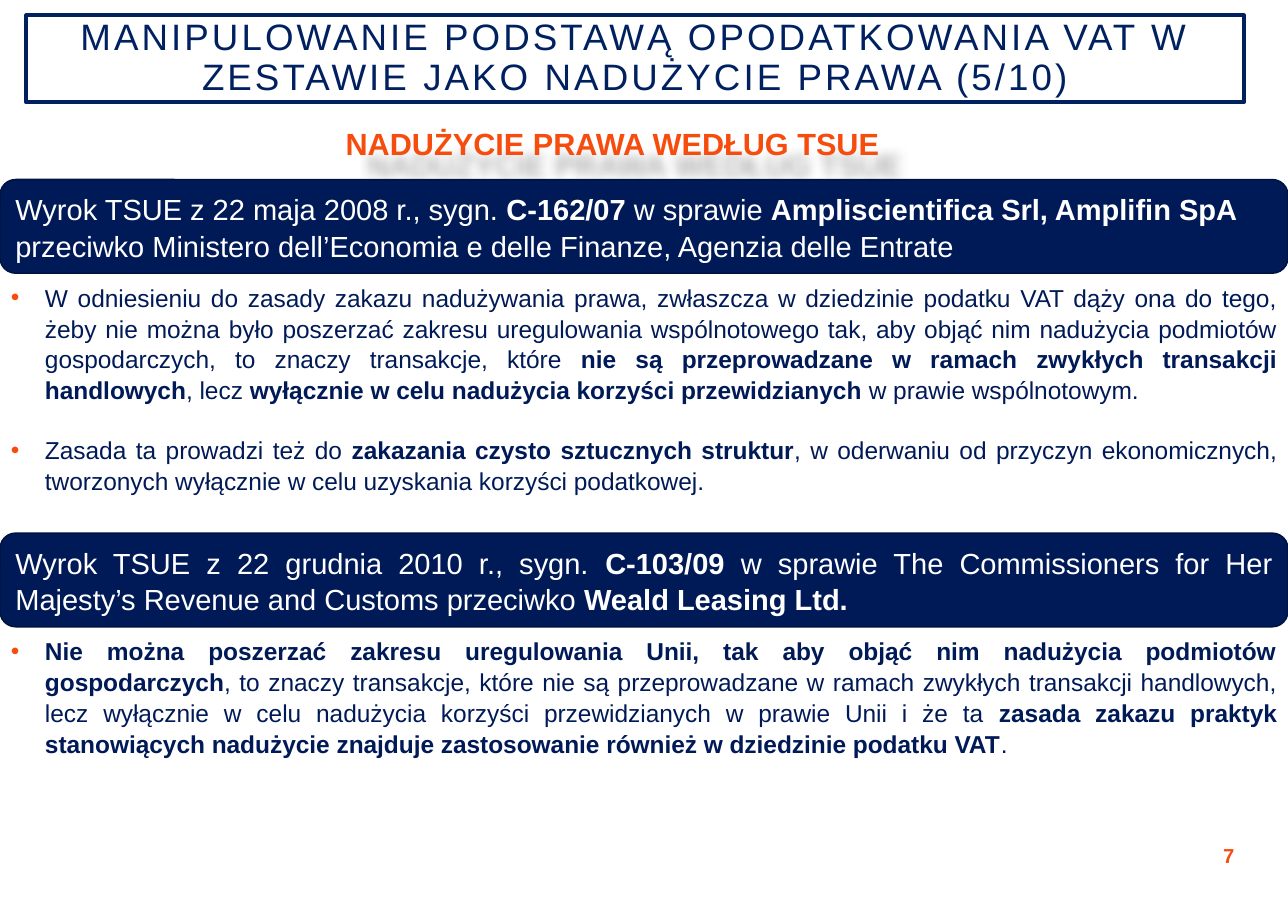
"""Build the slide on abuse of law in VAT according to CJEU rulings."""
from lxml import etree
from pptx import Presentation, util as u
from pptx.dml.color import RGBColor
from pptx.enum import shapes, text
from pptx.oxml import ns

THEME = {
    "font": "Arial", "title": "002060", "navy": "001A57", "edge": "001340",
    "accent": "F64C0E", "white": "FFFFFF",
    "title_size": 24, "subtitle_size": 20, "ruling_size": 19,
    "body_size": 16, "number_size": 13.2,
}
ALIGN = text.PP_ALIGN

deck = Presentation()
deck.slide_width, deck.slide_height = u.Inches(11.69), u.Inches(8.27)
slide = deck.slides.add_slide(deck.slide_layouts[6])


def place(left, top, width, height, preset=None, fill=None, line=None, weight=1):
    """Add a shape or a text box, measured in hundredths of the slide."""
    column, row = deck.slide_width / 100, deck.slide_height / 100
    area = [int(left * column), int(top * row), int(width * column), int(height * row)]
    if preset is None:
        part = slide.shapes.add_textbox(*area)
    else:
        part = slide.shapes.add_shape(preset, *area)
        part.shadow.inherit = False
        part.fill.solid()
        part.fill.fore_color.rgb = RGBColor.from_string(THEME[fill])
        part.line.color.rgb = RGBColor.from_string(THEME[line])
        part.line.width = u.Pt(weight)
    part.text_frame.word_wrap = True
    part.text_frame.vertical_anchor = text.MSO_ANCHOR.MIDDLE
    return part


def write(part, paragraphs, size, color, align, bold=False, spacing=None, gap=0, bullet=False):
    """Fill a part with paragraphs; asterisks switch bold on and off."""
    frame = part.text_frame
    for index, words in enumerate(paragraphs):
        paragraph = frame.add_paragraph() if index else frame.paragraphs[0]
        if bullet:
            props = paragraph._p.get_or_add_pPr()
            props.set("marL", str(u.Inches(0.31)))
            props.set("indent", str(u.Inches(-0.31)))
            tint = etree.SubElement(props, ns.qn("a:buClr"))
            etree.SubElement(tint, ns.qn("a:srgbClr"), val=THEME["accent"])
            etree.SubElement(props, ns.qn("a:buFont"), typeface=THEME["font"])
            etree.SubElement(props, ns.qn("a:buChar"), char="•")
        paragraph.alignment = align
        if spacing:
            paragraph.line_spacing = spacing
        if index and gap:
            paragraph.space_before = u.Pt(gap)
        for turn, piece in enumerate(words.split("*")):
            if piece:
                run = paragraph.add_run()
                run.text = piece
                run.font.name = THEME["font"]
                run.font.size = u.Pt(THEME[size])
                run.font.bold = bold or turn % 2 == 1
                run.font.color.rgb = RGBColor.from_string(THEME[color])


page_number = place(91.45, 91.29, 5.22, 5.32)
write(page_number, ["7"], "number_size", "accent", ALIGN.RIGHT, bold=True)

title = place(2.05, 1.69, 94.53, 9.55, shapes.MSO_SHAPE.RECTANGLE, "white", "title", 2.5)
frame = title.text_frame
frame.margin_left = frame.margin_right = frame.margin_top = frame.margin_bottom = u.Inches(0.2)
write(title, ["MANIPULOWANIE PODSTAWĄ OPODATKOWANIA VAT W ZESTAWIE JAKO NADUŻYCIE PRAWA (5/10)"],
      "title_size", "title", ALIGN.CENTER, spacing=0.9)
for run in frame.paragraphs[0].runs:
    run.font._element.set("spc", "200")

subtitle = place(23.18, 10.28, 48.76, 10.88)
write(subtitle, ["NADUŻYCIE PRAWA WEDŁUG TSUE"], "subtitle_size", "accent", ALIGN.CENTER, bold=True)
effects = etree.SubElement(subtitle._element.spPr, ns.qn("a:effectLst"))
shadow = etree.SubElement(effects, ns.qn("a:outerShdw"), blurRad=str(u.Inches(0.1)),
                          dist=str(u.Inches(0.27)), dir="2700000", algn="tl", rotWithShape="0")
shade = etree.SubElement(shadow, ns.qn("a:srgbClr"), val="000000")
etree.SubElement(shade, ns.qn("a:alpha"), val="30000")

rulings = [
    (19.71, 27.33,
     ["Wyrok TSUE z 22 maja 2008 r., sygn. *C-162/07* w sprawie *Ampliscientifica Srl, Amplifin SpA*",
      "przeciwko Ministero dell’Economia e delle Finanze, Agenzia delle Entrate"],
     ["W odniesieniu do zasady zakazu nadużywania prawa, zwłaszcza w dziedzinie podatku VAT dąży ona "
      "do tego, żeby nie można było poszerzać zakresu uregulowania wspólnotowego tak, aby objąć nim "
      "nadużycia podmiotów gospodarczych, to znaczy transakcje, które *nie są przeprowadzane w ramach "
      "zwykłych transakcji handlowych*, lecz *wyłącznie w celu nadużycia korzyści przewidzianych *"
      "w prawie wspólnotowym.",
      "Zasada ta prowadzi też do *zakazania czysto sztucznych struktur*, w oderwaniu od przyczyn "
      "ekonomicznych, tworzonych wyłącznie w celu uzyskania korzyści podatkowej."]),
    (58.52, 17.53,
     ["Wyrok TSUE z 22 grudnia 2010 r., sygn. *C-103/09* w sprawie The Commissioners for Her "
      "Majesty’s Revenue and Customs przeciwko *Weald Leasing Ltd.*"],
     ["*Nie można poszerzać zakresu uregulowania Unii, tak aby objąć nim nadużycia podmiotów "
      "gospodarczych*, to znaczy transakcje, które nie są przeprowadzane w ramach zwykłych transakcji "
      "handlowych, lecz wyłącznie w celu nadużycia korzyści przewidzianych w prawie Unii i że ta "
      "*zasada zakazu praktyk stanowiących nadużycie znajduje zastosowanie również w dziedzinie "
      "podatku VAT*."]),
]
for top, depth, heading, findings in rulings:
    ruling = place(0, top, 100, 10.28, shapes.MSO_SHAPE.ROUNDED_RECTANGLE, "navy", "edge")
    write(ruling, heading, "ruling_size", "white", ALIGN.JUSTIFY, spacing=1.05)
    reasoning = place(0, top + 10.58, 100, depth)
    reasoning.text_frame.vertical_anchor = text.MSO_ANCHOR.TOP
    write(reasoning, findings, "body_size", "navy", ALIGN.JUSTIFY, spacing=1.05, gap=19.3, bullet=True)

deck.save("out.pptx")
